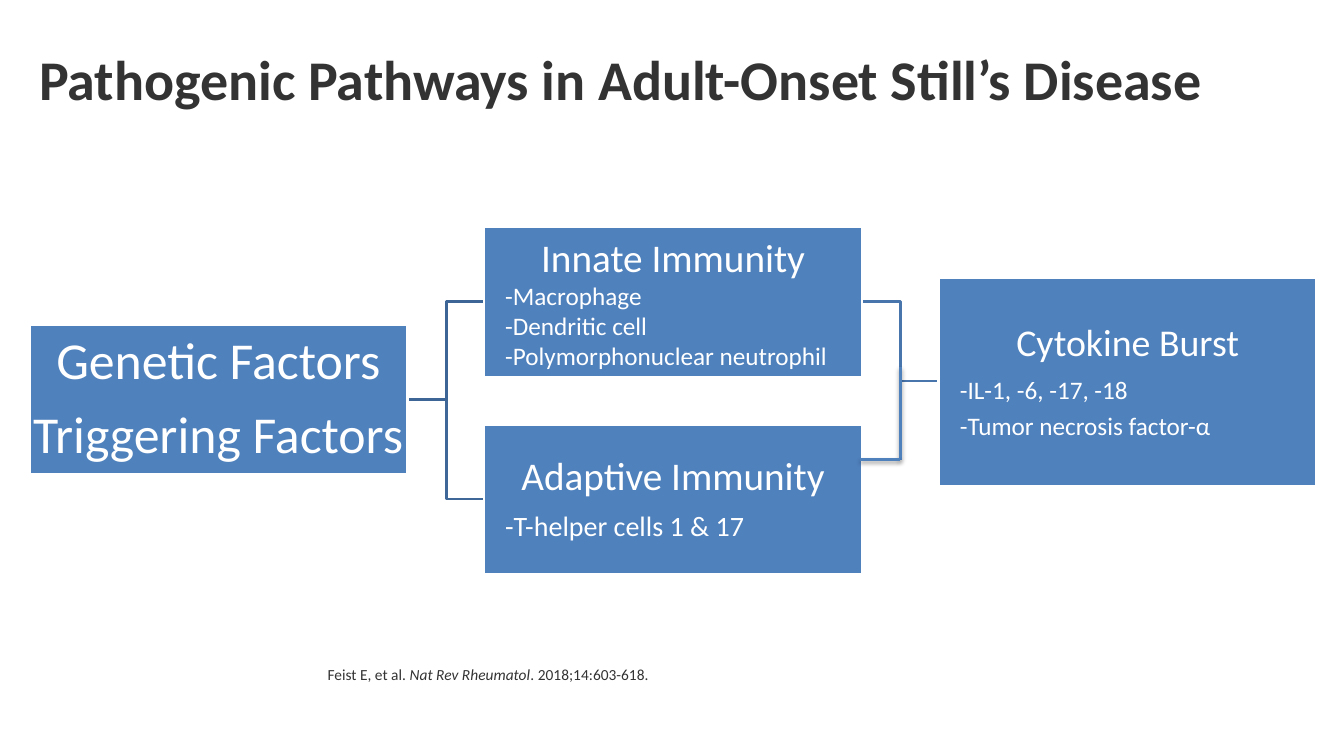
from dataclasses import dataclass

from lxml import etree
from pptx import Presentation
from pptx.dml.color import RGBColor
from pptx.enum.shapes import MSO_CONNECTOR as CONN, MSO_SHAPE as SHAPE
from pptx.enum.text import MSO_ANCHOR as ANCHOR, PP_ALIGN as ALIGN
from pptx.oxml.ns import qn
from pptx.util import Inches, Pt

COLORS = {
    "text": "333333", "white": "FFFFFF", "box": "4F81BD", "shadow": "000000",
    "genetic_adaptive": "3F6797", "genetic_innate": "3D6696",
    "innate_cytokine": "4875AC",
}
FONT = "Calibri"
BOX_W = 3.75
LINE_W = Pt(2)
DETAIL_INDENT = Inches(0.19)


@dataclass
class Box:
    left: float
    top: float
    height: float
    headings: list[str]
    heading_size: int
    details: list[str]
    detail_size: int = 18
    inset: float = 0.02
    spaced: bool = True


@dataclass
class Elbow:
    """Bracket running across, up or down at its middle, then across."""
    start: tuple[float, float]
    end: tuple[float, float]
    color: str


BOXES = [
    Box(0.29, 3.22, 1.49, ["Genetic Factors", "Triggering Factors"], 37, [],
        inset=0.03),
    Box(4.8, 2.25, 1.49, ["Innate Immunity"], 28,
        ["-Macrophage", "-Dendritic cell", "-Polymorphonuclear neutrophil"],
        spaced=False),
    Box(9.31, 2.75, 2.08, ["Cytokine Burst"], 27,
        ["-IL-1, -6, -17, -18", "-Tumor necrosis factor-α"]),
    Box(4.8, 4.21, 1.49, ["Adaptive Immunity"], 28,
        ["-T-helper cells 1 & 17"], detail_size=20),
]
ELBOWS = [
    Elbow((4.05, 3.96), (4.8, 4.95), "genetic_adaptive"),
    Elbow((8.56, 2.99), (9.31, 3.78), "innate_cytokine"),
    Elbow((4.05, 3.96), (4.8, 2.99), "genetic_innate"),
]
ADAPTIVE_LINK = [(8.93, 3.64), (8.93, 4.56), (8.53, 4.56)]


def rgb(name: str) -> RGBColor:
    return RGBColor.from_string(COLORS[name])


def set_font(p, size: float, color: str, bold: bool = False) -> None:
    f = p.font
    f.name, f.size, f.bold = FONT, Pt(size), bold
    f.color.rgb = rgb(color)


def add_elbow(s, elbow: Elbow) -> None:
    (x1, y1), (x2, y2) = elbow.start, elbow.end
    mid = (x1 + x2) / 2
    builder = s.shapes.build_freeform(Inches(x1), Inches(y1))
    points = [(mid, y1), (mid, y2), (x2, y2)]
    builder.add_line_segments([(Inches(x), Inches(y)) for x, y in points],
                              close=False)
    sp = builder.convert_to_shape()
    sp.shadow.inherit = False
    sp.fill.background()
    sp.line.color.rgb = rgb(elbow.color)
    sp.line.width = LINE_W


def add_box(s, box: Box) -> None:
    sp = s.shapes.add_shape(SHAPE.RECTANGLE, Inches(box.left), Inches(box.top),
                            Inches(BOX_W), Inches(box.height))
    sp.shadow.inherit = False
    sp.fill.solid()
    sp.fill.fore_color.rgb = rgb("box")
    sp.line.color.rgb = rgb("white")
    sp.line.width = LINE_W
    tf = sp.text_frame
    tf.word_wrap = True
    tf.vertical_anchor = ANCHOR.MIDDLE
    tf.margin_left = tf.margin_right = Inches(box.inset)
    tf.margin_top = tf.margin_bottom = Inches(box.inset)
    tf.text = "\n".join(box.headings + box.details)
    for i, p in enumerate(tf.paragraphs):
        is_heading = i < len(box.headings)
        size = box.heading_size if is_heading else box.detail_size
        p.alignment = ALIGN.CENTER if is_heading else ALIGN.LEFT
        if not is_heading:
            p._p.get_or_add_pPr().set("marL", str(DETAIL_INDENT))
        if box.spaced:
            p.line_spacing = 0.9
            p.space_after = Pt(0.35 * size)
        set_font(p, size, "white")


def add_shadowed_line(s, start: tuple[float, float],
                      end: tuple[float, float]) -> None:
    line = s.shapes.add_connector(CONN.STRAIGHT, *map(Inches, start + end))
    line.line.color.rgb = rgb("box")
    line.line.width = LINE_W
    effects = etree.SubElement(line._element.spPr, qn("a:effectLst"))
    shadow = etree.SubElement(effects, qn("a:outerShdw"), blurRad=str(Pt(3.1)),
                              dist=str(Pt(1.6)), dir="5400000", rotWithShape="0")
    color = etree.SubElement(shadow, qn("a:srgbClr"), val=COLORS["shadow"])
    etree.SubElement(color, qn("a:alpha"), val="38000")


def add_text(s, area: tuple[float, float, float, float],
             runs: list[tuple[str, bool]], size: float, anchor: ANCHOR,
             bold: bool = False) -> None:
    """Add one paragraph made of (text, italic) runs."""
    tf = s.shapes.add_textbox(*map(Inches, area)).text_frame
    tf.word_wrap = True
    tf.vertical_anchor = anchor
    p = tf.paragraphs[0]
    p.line_spacing = 0.9
    set_font(p, size, "text", bold)
    for text, italic in runs:
        r = p.add_run()
        r.text = text
        r.font.italic = italic


def main() -> None:
    prs = Presentation()
    prs.slide_width, prs.slide_height = Inches(13.33), Inches(7.5)
    s = prs.slides.add_slide(prs.slide_layouts[6])
    add_text(s, (0.29, 0.19, 12.78, 1.25),
             [("Pathogenic Pathways in Adult-Onset Still’s Disease", False)],
             40, ANCHOR.MIDDLE, bold=True)
    for elbow in ELBOWS:
        add_elbow(s, elbow)
    for box in BOXES:
        add_box(s, box)
    add_text(s, (3.15, 6.57, 10.18, 0.8),
             [("Feist E, et al. ", False), ("Nat Rev Rheumatol", True),
              (". 2018;14:603-618.", False)], 11, ANCHOR.TOP)
    for start, end in zip(ADAPTIVE_LINK, ADAPTIVE_LINK[1:]):
        add_shadowed_line(s, start, end)
    prs.save("out.pptx")


if __name__ == "__main__":
    main()
